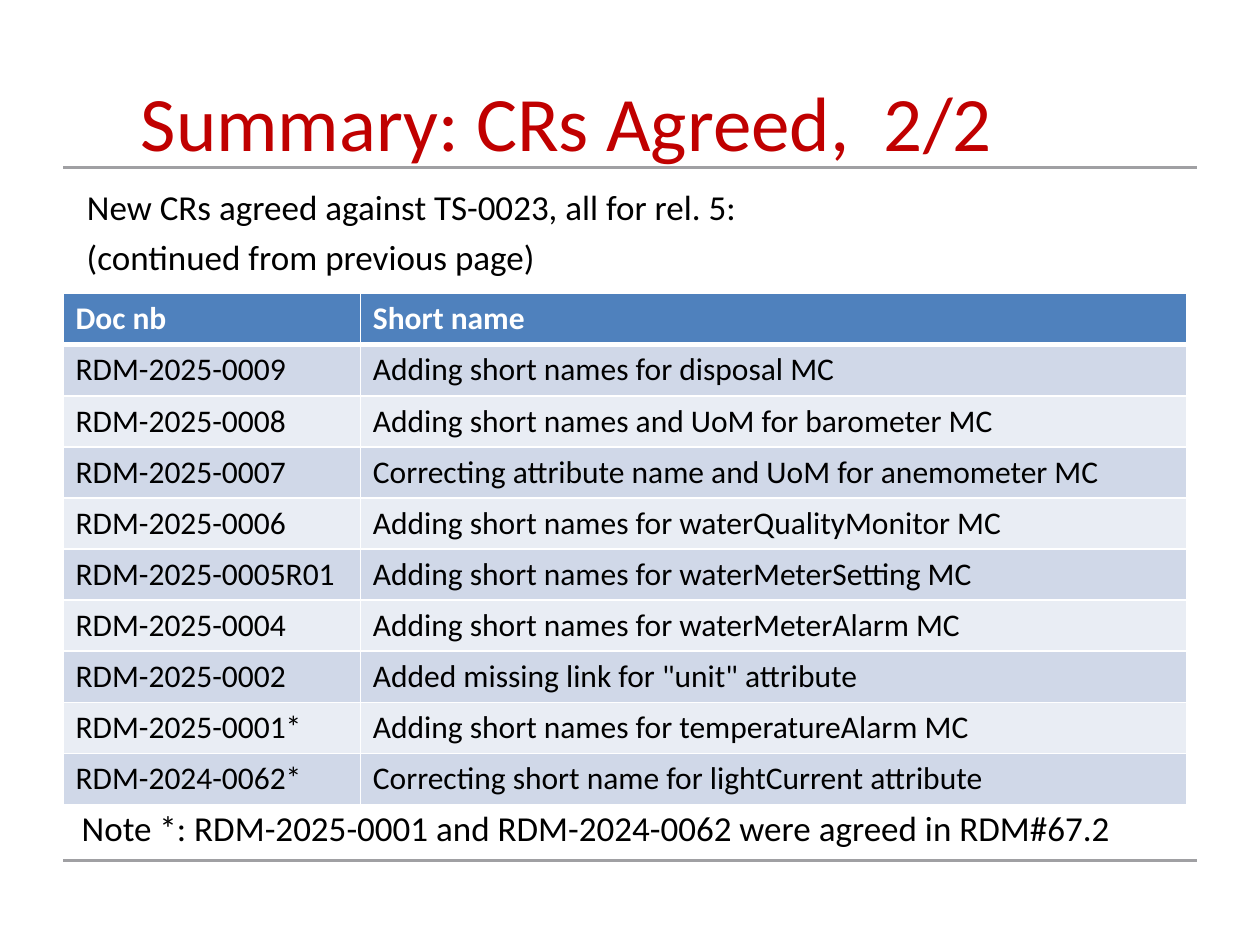
"""Build the summary slide listing the agreed change requests."""
from lxml import etree
from pptx import Presentation, util as u
from pptx.dml.color import RGBColor
from pptx.enum import shapes, text
from pptx.oxml import ns

COLORS = {
    "title": "C00000", "body": "000000", "rule": "A0A0A3", "white": "FFFFFF",
    "header": "4F81BD", "odd": "D0D8E8", "even": "E9EDF4",
}
ROWS = [
    ("Doc nb", "Short name"),
    ("RDM-2025-0009", "Adding short names for disposal MC"),
    ("RDM-2025-0008", "Adding short names and UoM for barometer MC"),
    ("RDM-2025-0007", "Correcting attribute name and UoM for anemometer MC"),
    ("RDM-2025-0006", "Adding short names for waterQualityMonitor MC"),
    ("RDM-2025-0005R01", "Adding short names for waterMeterSetting MC"),
    ("RDM-2025-0004", "Adding short names for waterMeterAlarm MC"),
    ("RDM-2025-0002", 'Added missing link for "unit" attribute'),
    ("RDM-2025-0001*", "Adding short names for temperatureAlarm MC"),
    ("RDM-2024-0062*", "Correcting short name for lightCurrent attribute"),
]


def write(frame, words, size=20, color="body", bold=False,
          align=text.PP_ALIGN.LEFT, indent=None):
    """Fill a text frame with one formatted paragraph."""
    frame.word_wrap = True
    para = frame.paragraphs[0]
    if indent is not None:
        props = para._p.get_or_add_pPr()
        props.set("marL", str(u.Inches(indent)))
        props.set("indent", "0")
        etree.SubElement(props, ns.qn("a:buNone"))
        para.level = 1
    para.alignment = align
    para.space_before = u.Pt(0)
    span = para.add_run()
    span.text = words
    span.font.name = "Calibri"
    span.font.size = u.Pt(size)
    span.font.bold = bold
    span.font.color.rgb = RGBColor.from_string(COLORS[color])


def add_border(cell, side, width):
    """Draw a white line along one side of a cell."""
    line = etree.SubElement(cell._tc.get_or_add_tcPr(), ns.qn(f"a:ln{side}"),
                            w=str(u.Pt(width)))
    fill = etree.SubElement(line, ns.qn("a:solidFill"))
    etree.SubElement(fill, ns.qn("a:srgbClr"), val=COLORS["white"])


deck = Presentation()
deck.slide_width, deck.slide_height = u.Inches(10), u.Inches(7.5)
page = deck.slides.add_slide(deck.slide_layouts[1])

for y in (6.83, 1.33):
    rule = page.shapes.add_connector(shapes.MSO_CONNECTOR.STRAIGHT, u.Inches(0.5),
                                     u.Inches(y), u.Inches(9.5), u.Inches(y))
    rule.line.color.rgb = RGBColor.from_string(COLORS["rule"])
    rule.line.width = u.Pt(1.75)
    etree.SubElement(rule._element.spPr, ns.qn("a:effectLst"))

title = page.shapes.title
title.left, title.top = u.Inches(0), u.Inches(0.5)
title.width, title.height = u.Inches(9), u.Inches(0.92)
title.text_frame.auto_size = text.MSO_AUTO_SIZE.NONE
title.text_frame.vertical_anchor = text.MSO_ANCHOR.MIDDLE
write(title.text_frame, "Summary: CRs Agreed,  2/2", size=44, color="title",
      align=text.PP_ALIGN.CENTER)

body = page.placeholders[1]
body.left, body.top = u.Inches(0.5), u.Inches(1.42)
body.width, body.height = u.Inches(8.75), u.Inches(0.5)
body.text_frame.auto_size = text.MSO_AUTO_SIZE.NONE
write(body.text_frame, "New CRs agreed against TS-0023, all for rel. 5:", indent=0.09)

table = page.shapes.add_table(len(ROWS), 2, u.Inches(0.5), u.Inches(2.33),
                              u.Inches(8.92), u.Inches(4)).table
for column, width in zip(table.columns, (2.36, 6.56)):
    column.width = u.Inches(width)
for r, row in enumerate(ROWS):
    header = r == 0
    fill = "header" if header else "odd" if r % 2 else "even"
    for c, words in enumerate(row):
        cell = table.cell(r, c)
        for side in "LRTB":
            thick = (header and side == "B") or (r == 1 and side == "T")
            add_border(cell, side, 3 if thick else 1)
        cell.fill.solid()
        cell.fill.fore_color.rgb = RGBColor.from_string(COLORS[fill])
        write(cell.text_frame, words, size=18, bold=header,
              color="white" if header else "body")

for words, left, top, width in (
    ("(continued from previous page)", 0.5, 1.82, 8.67),
    ("Note *: RDM-2025-0001 and RDM-2024-0062 were agreed in RDM#67.2", 0.46, 6.35, 8.75),
):
    box = page.shapes.add_textbox(u.Inches(left), u.Inches(top),
                                  u.Inches(width), u.Inches(0.5))
    write(box.text_frame, words, indent=0.09)

deck.save("out.pptx")
